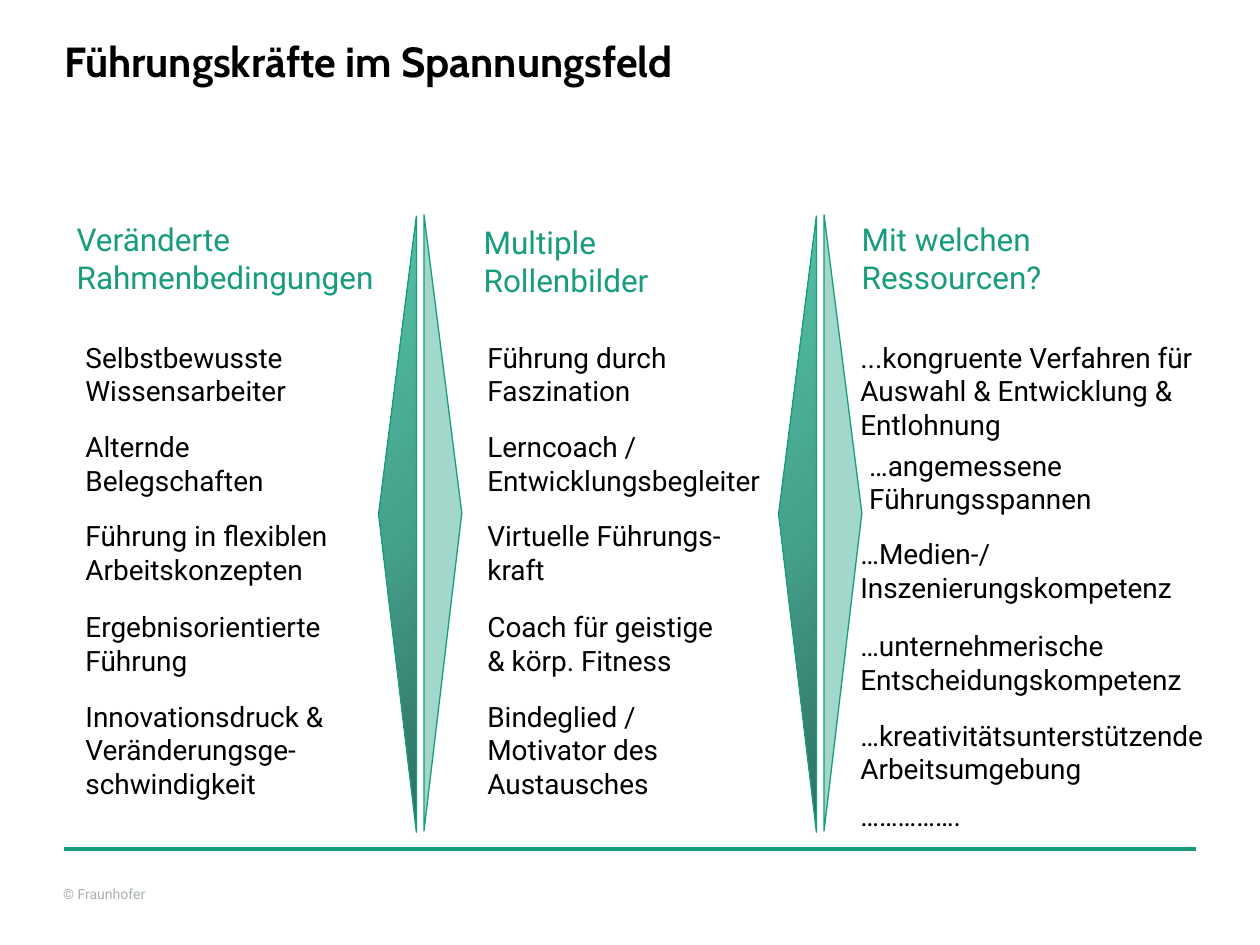
from copy import deepcopy

from pptx import Presentation
from pptx.dml.color import RGBColor
from pptx.enum.shapes import MSO_CONNECTOR, MSO_SHAPE
from pptx.enum.text import MSO_ANCHOR, MSO_AUTO_SIZE, PP_ALIGN
from pptx.oxml.ns import qn
from pptx.oxml.xmlchemy import OxmlElement
from pptx.util import Inches, Pt

WIDE, HIGH = Inches(10), Inches(7.5)
COL, ROW = WIDE / 100, HIGH / 75
GREEN, MINT, BLACK, GREY = "179C7D", "A2D7CB", "000000", "A8AFAF"
SHADES = ["2E6F60", "46A28C", "55C1A8"]

LEFT_TOPICS = [
    (0, 0, 18.5, ["Selbstbewusste\nWissensarbeiter"]),
    (0, 7.1, 16.7, ["Alternde\nBelegschaften"]),
    (0, 14.2, 23.2, ["Führung in flexiblen\nArbeitskonzepten"]),
    (0, 21.4, 22.2, ["Ergebnisorientierte\nFührung"]),
    (0, 28.5, 22.3, ["Innovationsdruck &\nVeränderungsge-\nschwindigkeit"]),
]
ROLES = [
    (0, 0, 17.5, ["Führung durch\nFaszination"]),
    (0, 7.1, 25.3, ["Lerncoach /\nEntwicklungsbegleiter"]),
    (0, 14.2, 21.9, ["Virtuelle Führungs-\nkraft"]),
    (0, 21.4, 21, ["Coach für geistige\n& körp. Fitness"]),
    (0, 28.5, 17.3, ["Bindeglied /\nMotivator des\nAustausches"]),
]
MEANS = [
    (0, 0, 31.1, ["...kongruente Verfahren für\nAuswahl & Entwicklung &\nEntlohnung"]),
    (0.7, 8.6, 20.6, ["…angemessene\nFührungsspannen"]),
    (0, 15.6, 28.2, ["…Medien-/\nInszenierungskompetenz"]),
    (0, 22.9, 29.4, ["…unternehmerische\nEntscheidungskompetenz"]),
    (0, 30, 32.1, ["…kreativitätsunterstützende\nArbeitsumgebung", "……………."]),
]


def tint(code):
    """Turn a hex string into a colour."""
    return RGBColor.from_string(code)


def area(left, top, wide, high):
    """Turn grid columns and rows into slide lengths."""
    return [round(n) for n in (left * COL, top * ROW, wide * COL, high * ROW)]


def write(para, text, face, size, hue, bold=False):
    """Add one run per line of text to a paragraph."""
    for i, line in enumerate(text.split("\n")):
        if i:
            para.add_line_break()
        run = para.add_run()
        run.text = line
        run.font.name, run.font.size, run.font.bold = face, Pt(size), bold
        run.font.color.rgb = tint(hue)


def label(slide, box, paras, size, hue, inset=True):
    """Place a text box that fits its unwrapped lines."""
    frame = slide.shapes.add_textbox(*area(*box)).text_frame
    frame.word_wrap = False
    frame.auto_size = MSO_AUTO_SIZE.SHAPE_TO_FIT_TEXT
    if not inset:
        frame.margin_left = frame.margin_right = 0
        frame.margin_top = frame.margin_bottom = 0
    for i, text in enumerate(paras):
        para = frame.add_paragraph() if i else frame.paragraphs[0]
        para.space_after = Pt(size * 0.48)
        write(para, text, "Roboto", size, hue)


def heading(slide, box, text):
    """Format the title placeholder."""
    title = slide.shapes.title
    title.left, title.top, title.width, title.height = area(*box)
    frame = title.text_frame
    frame.margin_left = frame.margin_right = 0
    frame.margin_top = frame.margin_bottom = 0
    frame.word_wrap, frame.auto_size = True, MSO_AUTO_SIZE.NONE
    frame.vertical_anchor = MSO_ANCHOR.TOP
    para = frame.paragraphs[0]
    para.alignment = PP_ALIGN.LEFT
    write(para, text, "Cabin", 24, BLACK, True)


def column(slide, head, box, title, items):
    """Place a column heading and the topics below it."""
    label(slide, (*head, 7.1), [title], 18, GREEN)
    left, top = box
    for x, y, wide, paras in items:
        lines = sum(text.count("\n") + 1 for text in paras)
        high = 1 + 2.7 * lines + 1.1 * (len(paras) - 1)
        label(slide, (left + x, top + y, wide, high), paras, 16, BLACK)


def blade(group, box, turn):
    """Place a tall triangle whose tip points sideways."""
    left, top, wide, high = box
    flat = (left + (wide - high) / 2, top + (high - wide) / 2, high, wide)
    shape = group.shapes.add_shape(MSO_SHAPE.ISOSCELES_TRIANGLE, *area(*flat))
    shape.rotation, shape.adjustments[0] = turn, 0.484
    shape.shadow.inherit = False
    shape.line.color.rgb, shape.line.width = tint(GREEN), Pt(0.75)
    return shape


def shade(shape):
    """Fill a shape with the three-step green gradient."""
    shape.fill.gradient()
    shape.fill.gradient_angle = 135
    steps = shape._element.spPr.find(".//" + qn("a:gsLst"))
    steps.append(deepcopy(steps[-1]))
    for i, stop in enumerate(shape.fill.gradient_stops):
        stop.position, stop.color.rgb = i / 2, tint(SHADES[i])


def divider(slide, box):
    """Place a pair of blades back to back."""
    left, top, wide, high = box
    group = slide.shapes.add_group_shape()
    right = blade(group, (left + wide - 3, top, 3, high), 90)
    right.fill.solid()
    right.fill.fore_color.rgb = tint(MINT)
    dark = blade(group, (left, top + 0.1, 3, high), 270)
    dark._element.spPr.xfrm.set("flipH", "1")
    shade(dark)


def footer(slide, box):
    """Place the closing rule and the copyright line."""
    left, top, wide, high = box
    x, y, width, _ = area(left, top, wide, high)
    rule = slide.shapes.add_connector(MSO_CONNECTOR.STRAIGHT, x, y, x + width, y)
    rule.line.color.rgb, rule.line.width = tint(GREEN), Pt(2.5)
    rule._element.spPr.append(OxmlElement("a:effectLst"))
    label(slide, (left - 0.1, top + 2.9, 9.8, 1.3), ["© Fraunhofer"], 8, GREY, False)


def main():
    """Build and save the slide."""
    deck = Presentation()
    deck.slide_width, deck.slide_height = WIDE, HIGH
    slide = deck.slides.add_slide(deck.slide_layouts[5])
    footer(slide, (5.1, 67.4, 89.8, 4.2))
    heading(slide, (5.1, 2.8, 89.8, 13.4), "Führungskräfte im Spannungsfeld")
    column(slide, (5.1, 17, 27.5), (5.8, 26.5),
           "Veränderte\nRahmenbedingungen", LEFT_TOPICS)
    column(slide, (37.4, 17.2, 16.3), (37.7, 26.5),
           "Multiple\nRollenbilder", ROLES)
    column(slide, (67.4, 17, 16.6), (67.3, 26.5),
           "Mit welchen\nRessourcen?", MEANS)
    for left in (30.05, 61.8):
        divider(slide, (left, 17.05, 6.6, 48.9))
    deck.save("out.pptx")


if __name__ == "__main__":
    main()
